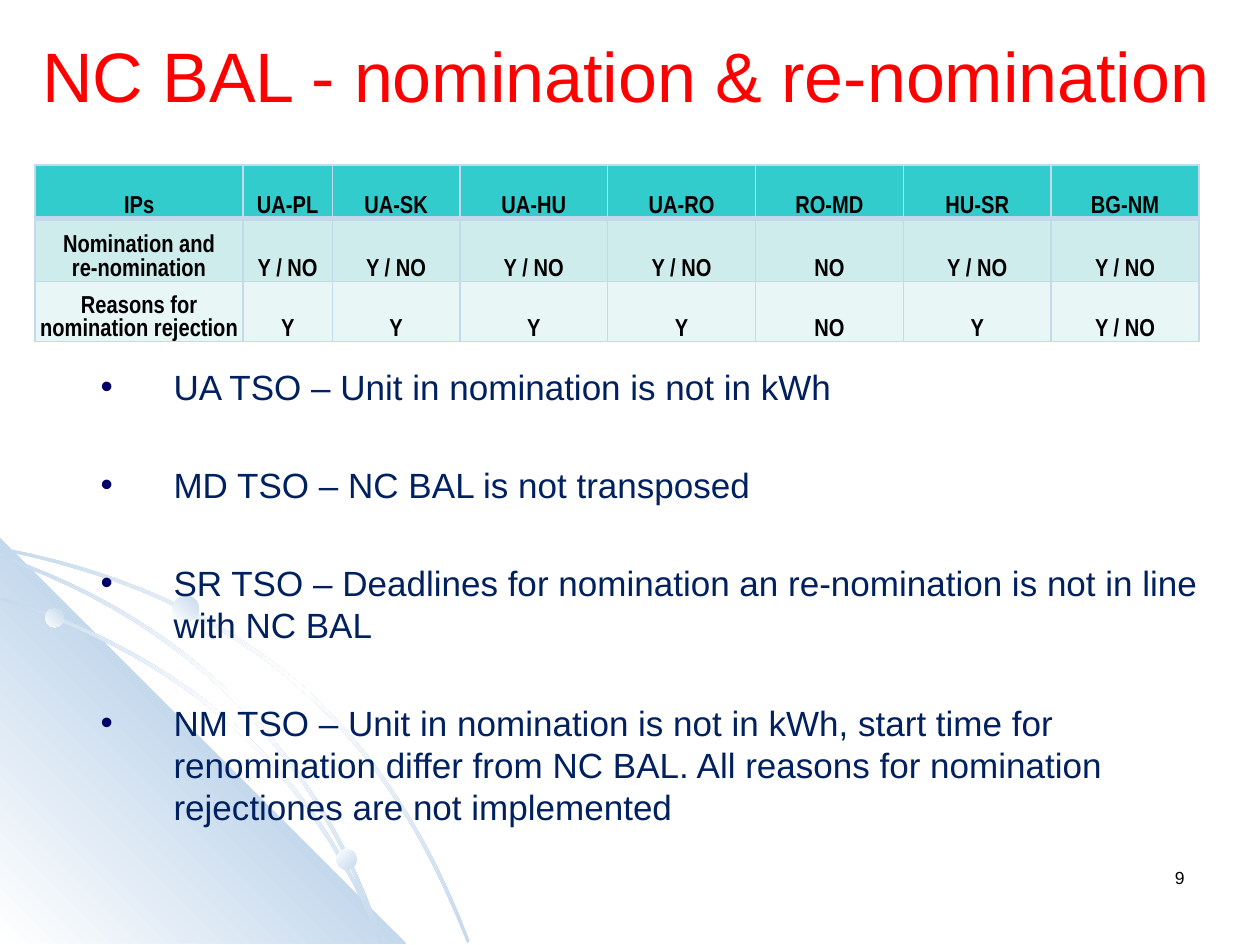
from lxml import etree
from pptx import Presentation
from pptx import util as u
from pptx.dml.color import RGBColor
from pptx.enum import shapes, text
from pptx.oxml import ns

HUES = {"title": "FF0000", "body": "002060", "dot": "000066", "ink": "000000",
        "pale": "C5D9ED", "white": "FFFFFF",
        "head": "33CCCC", "odd": "CEECEC", "even": "E8F6F6"}

# Corner art, in centimetres: each arc is start, two control points, end
ARCS = [
    [(0, 11.09), (4.83, 12.05), (7.7, 14.53), (9.42, 19.02)],
    [(0, 12.09), (3.76, 13.28), (6.27, 15.52), (7.67, 19.02)],
    [(0, 11.25), (3.81, 12.57), (6.43, 15.24), (7.67, 19.02)],
]
STEPS = 24
BREADTH = 0.05
WEDGE = [(8.18, 19.02), (0, 19.02), (0, 10.85)]
BEADS = [(0.91, 12.27, 0.38, 315), (6.78, 17.12, 0.41, 45), (3.48, 12.01, 0.53, 315)]

# Table: column widths, then height, fill and words of each row
COLS = [4.19, 1.8, 2.57] + [2.98] * 5
ROWS = [
    (1.07, "head", ["IPs", "UA-PL", "UA-SK", "UA-HU", "UA-RO", "RO-MD", "HU-SR", "BG-NM"]),
    (1.27, "odd", ["Nomination and\vre-nomination"] + ["Y / NO"] * 4
     + ["NO", "Y / NO", "Y / NO"]),
    (1.04, "even", ["Reasons for nomination rejection"] + ["Y"] * 4
     + ["NO", "Y", "Y / NO"]),
]
CELL = {"margin_left": u.Cm(0.03), "margin_right": u.Cm(0.03),
        "margin_top": u.Cm(0.03), "margin_bottom": 0,
        "vertical_anchor": text.MSO_ANCHOR.BOTTOM}
THIN, THICK = 1, 3

POINTS = [
    "UA TSO – Unit in nomination is not in kWh",
    "MD TSO – NC BAL is not transposed",
    "SR TSO – Deadlines for nomination an re-nomination is not in line with NC BAL",
    "NM TSO – Unit in nomination is not in kWh, start time for renomination differ "
    "from NC BAL. All reasons for nomination rejectiones are not implemented",
]
INDENT, HANG = u.Cm(2.74), u.Cm(1.47)
LINE, GAP = u.Pt(24), u.Pt(32)


def apply(item, vals):
    for key, val in vals.items():
        setattr(item, key, val)


def box(*cms):
    return dict(zip(("left", "top", "width", "height"), map(u.Cm, cms)))


def color(hue):
    return RGBColor.from_string(HUES[hue])


def style(para, size, hue, face="Arial", bold=False, **vals):
    apply(para.font, {"size": u.Pt(size), "name": face, "bold": bold})
    para.font.color.rgb = color(hue)
    apply(para, vals)


def node(up, tag, **attrs):
    return etree.SubElement(up, ns.qn(tag), attrs)


def tint(up, hue):
    node(up, "a:srgbClr", val=HUES[hue])


def shade(shape, hues, angle):
    """Fill with evenly spaced colour stops, the angle turning clockwise."""
    shape.shadow.inherit = False
    shape.line.fill.background()
    shape.fill.background()
    blank = shape.element.spPr.find(ns.qn("a:noFill"))
    grad = etree.Element(ns.qn("a:gradFill"), rotWithShape="1")
    stops = node(grad, "a:gsLst")
    for i, hue in enumerate(hues):
        tint(node(stops, "a:gs", pos=str(100000 * i // (len(hues) - 1))), hue)
    node(grad, "a:lin", ang=str(angle * 60000), scaled="0")
    blank.getparent().replace(blank, grad)


def curve(start, pull, push, end):
    """Return points along a cubic Bezier curve."""
    spots = []
    for i in range(STEPS + 1):
        t = i / STEPS
        s = 1 - t
        spots.append(tuple(s**3 * a + 3 * s * s * t * b + 3 * s * t * t * c + t**3 * d
                           for a, b, c, d in zip(start, pull, push, end)))
    return spots


def outline(group, spots, hues, angle):
    ends = [(u.Cm(x), u.Cm(y)) for x, y in spots]
    pen = group.shapes.build_freeform(*ends[0])
    pen.add_line_segments(ends[1:], close=True)
    shade(pen.convert_to_shape(), hues, angle)


def band(group, arc):
    """Draw a thin strip: out along the curve, back along its shifted twin."""
    out = curve(*arc)
    back = [(x + BREADTH, y - BREADTH) for x, y in reversed(out)]
    outline(group, out + back, ["pale", "white", "pale"], 45)


def bead(group, x, y, size, angle):
    ball = group.shapes.add_shape(shapes.MSO_SHAPE.OVAL, **box(x, y, size, size))
    shade(ball, ["white", "pale"], angle)


def corner(slide):
    group = slide.shapes.add_group_shape()
    band(group, ARCS[0])
    outline(group, WEDGE, ["white", "pale", "white"], 315)
    for arc in ARCS[1:]:
        band(group, arc)
    for spot in BEADS:
        bead(group, *spot)


def title(slide):
    head = slide.shapes.title
    apply(head, box(0.51, 0.53, 24.21, 1.93))
    frame = head.text_frame
    apply(frame, {"text": "NC BAL - nomination & re-nomination", "word_wrap": True,
                  "vertical_anchor": text.MSO_ANCHOR.MIDDLE,
                  "auto_size": text.MSO_AUTO_SIZE.NONE})
    style(frame.paragraphs[0], 40, "title", alignment=text.PP_ALIGN.CENTER)


def note(slide, place, **vals):
    frame = slide.shapes.add_textbox(**place).text_frame
    apply(frame, {"word_wrap": True, **vals})
    return frame


def bullet(para):
    props = para._p.get_or_add_pPr()
    props.set("marL", str(INDENT))
    props.set("indent", str(-HANG))
    tint(node(props, "a:buClr"), "dot")
    node(props, "a:buFont", typeface="Arial")
    node(props, "a:buChar", char="•")


def points(slide):
    # The top margin keeps the list clear of the table
    frame = note(slide, box(0.51, 2.51, 24.21, 15.19), margin_top=u.Cm(4.85))
    for i, line in enumerate(POINTS):
        para = frame.add_paragraph() if i else frame.paragraphs[0]
        para.text = line
        style(para, 20, "body", line_spacing=LINE, space_before=GAP if i else 0)
        bullet(para)


def edge(cell, **widths):
    """Draw cell borders, given as side letter and width in points."""
    props = cell._tc.get_or_add_tcPr()
    for i, (side, width) in enumerate(widths.items()):
        line = etree.Element(ns.qn("a:ln" + side), w=str(u.Pt(width)))
        tint(node(line, "a:solidFill"), "pale")
        props.insert(i, line)


def fill(cell, word, hue):
    apply(cell, CELL)
    cell.text_frame.text = word
    style(cell.text_frame.paragraphs[0], 14, "ink", "Arial Narrow", True,
          alignment=text.PP_ALIGN.CENTER)
    cell.fill.solid()
    cell.fill.fore_color.rgb = color(hue)


def grid(slide):
    high = sum(row[0] for row in ROWS)
    place = box(0.71, 3.33, sum(COLS), high)
    table = slide.shapes.add_table(len(ROWS), len(COLS), **place).table
    apply(table, {"first_row": False, "horz_banding": False})
    for col, width in zip(table.columns, COLS):
        col.width = u.Cm(width)
    for r, (height, hue, words) in enumerate(ROWS):
        table.rows[r].height = u.Cm(height)
        for c, word in enumerate(words):
            cell = table.cell(r, c)
            fill(cell, word, hue)
            edge(cell, L=THIN, R=THIN, T=THICK if r == 1 else THIN,
                 B=THICK if r == 0 else THIN)


def number(slide):
    para = note(slide, box(18.21, 17.35, 5.92, 1.27)).paragraphs[0]
    para.text = "9"
    style(para, 10, "ink", alignment=text.PP_ALIGN.RIGHT)


def main():
    deck = Presentation()
    apply(deck, {"slide_width": u.Cm(25.4), "slide_height": u.Cm(19.05)})
    slide = deck.slides.add_slide(deck.slide_layouts[5])
    for part in (corner, number, title, points, grid):
        part(slide)
    deck.save("out.pptx")


if __name__ == "__main__":
    main()
